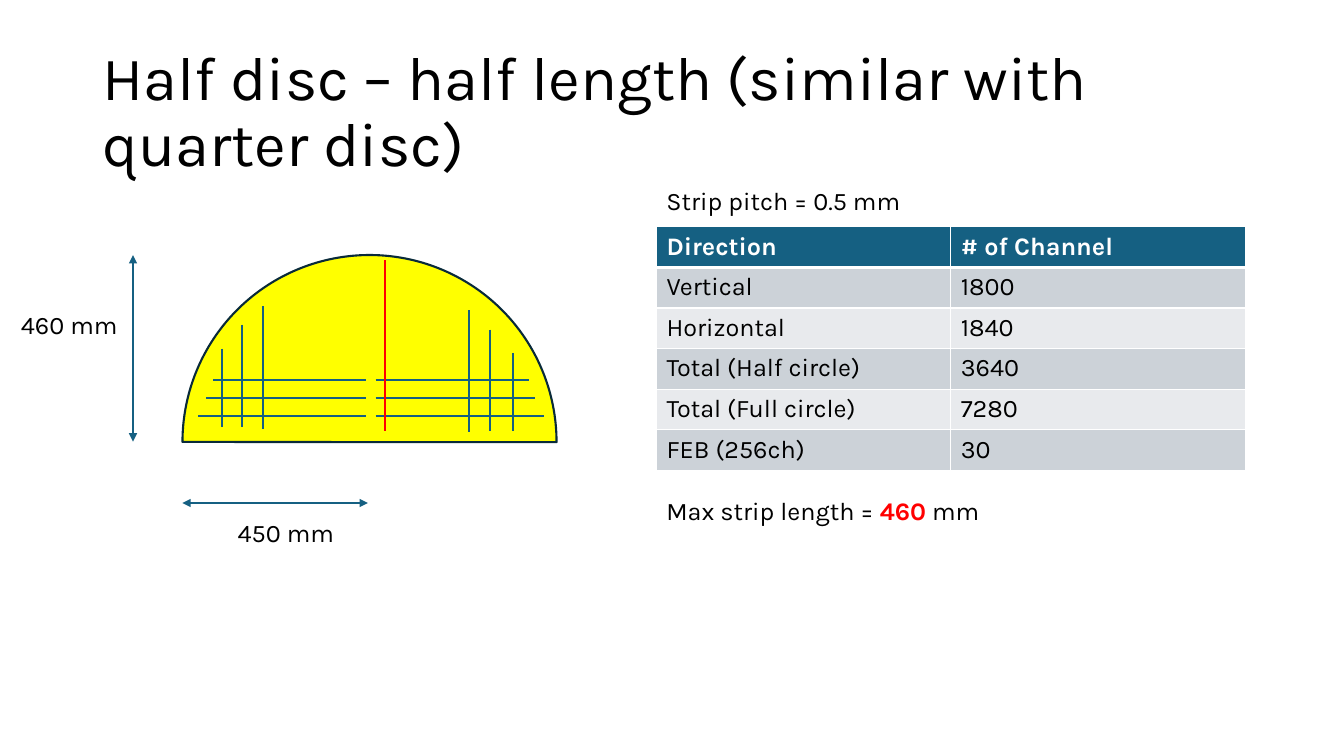
"""Build the half disc strip layout slide."""
from lxml.etree import SubElement
from pptx import Presentation
from pptx.dml.color import RGBColor
from pptx.enum.shapes import MSO_CONNECTOR, MSO_SHAPE
from pptx.enum.text import MSO_ANCHOR
from pptx.oxml.ns import qn
from pptx.util import Pt

BLACK, WHITE, RED = "000000", "FFFFFF", "FF0000"
TEAL, NAVY, YELLOW = "156082", "092A39", "FFFF00"
BANDS = "CCD2D8", "E8EAED"


def color(value):
    return RGBColor.from_string(value)


class StripSlide:
    def __init__(self, slide, font="Karla", size=18, stroke=1.5):
        self.shapes = slide.shapes
        self.font, self.size, self.stroke = font, size, stroke

    def style(self, font, ink=BLACK, size=None, bold=False):
        font.name, font.size, font.bold = self.font, Pt(size or self.size), bold
        font.color.rgb = color(ink)

    def text(self, left, top, width, height, content, size=None, spacing=None):
        box = self.shapes.add_textbox(Pt(left), Pt(top), Pt(width), Pt(height))
        frame = box.text_frame
        frame.word_wrap = True
        frame.vertical_anchor = MSO_ANCHOR.MIDDLE
        paragraph = frame.paragraphs[0]
        paragraph.line_spacing = spacing
        self.style(paragraph.font, size=size)
        paragraph.add_run().text = content
        return paragraph

    def half_disc(self, left, top, diameter):
        disc = self.shapes.add_shape(MSO_SHAPE.PIE, Pt(left), Pt(top), Pt(diameter), Pt(diameter))
        disc.adjustments[0], disc.adjustments[1] = 54.03, 162
        disc.rotation = 90
        disc.shadow.inherit = False
        disc.fill.solid()
        disc.fill.fore_color.rgb = color(YELLOW)
        disc.line.color.rgb = color(NAVY)
        disc.line.width = Pt(self.stroke)

    def line(self, x1, y1, x2, y2, ink=TEAL, arrows=False):
        strip = self.shapes.add_connector(MSO_CONNECTOR.STRAIGHT, Pt(x1), Pt(y1), Pt(x2), Pt(y2))
        strip.line.color.rgb = color(ink)
        strip.line.width = Pt(self.stroke)
        properties = strip.line._get_or_add_ln()
        if arrows:
            for end in ("a:headEnd", "a:tailEnd"):
                SubElement(properties, qn(end), type="triangle")
        SubElement(properties.getparent(), qn("a:effectLst"))

    def border(self, cell, side, width):
        edge = SubElement(cell._tc.get_or_add_tcPr(), qn(f"a:ln{side}"), w=str(Pt(width)))
        SubElement(SubElement(edge, qn("a:solidFill")), qn("a:srgbClr"), val=WHITE)

    def table(self, left, top, width, row_height, rows):
        grid = self.shapes.add_table(len(rows), len(rows[0]), Pt(left), Pt(top),
                                     Pt(width), Pt(row_height * len(rows))).table
        for r, values in enumerate(rows):
            header = r == 0
            grid.rows[r].height = Pt(row_height)
            for c, value in enumerate(values):
                cell = grid.cell(r, c)
                cell.text = value
                self.style(cell.text_frame.paragraphs[0].font, WHITE if header else BLACK, bold=header)
                for side in "LRTB":
                    under_header = (r, side) in ((0, "B"), (1, "T"))
                    self.border(cell, side, 3 if under_header else 1)
                cell.fill.solid()
                cell.fill.fore_color.rgb = color(TEAL if header else BANDS[(r - 1) % 2])


def main():
    deck = Presentation()
    deck.slide_width, deck.slide_height = Pt(960), Pt(540)
    page = StripSlide(deck.slides.add_slide(deck.slide_layouts[6]))

    page.text(66, 28.8, 860.5, 104.4, "Half disc – half length (similar with quarter disc)",
              size=44, spacing=0.9)

    page.half_disc(130.3, 182.2, 267.2)
    page.line(130.3, 359.3, 262.8, 359.3, arrows=True)
    page.text(162.7, 366, 100.8, 29, "450 mm")
    page.line(95, 315.4, 95, 182.2, arrows=True)
    page.text(7.9, 217.2, 100.8, 29, "460 mm")

    vertical_strips = [(158.4, 249, 305.3), (172.8, 231.8, 305.3), (187.9, 218.9, 306.7),
                       (334.8, 221.8, 308.9), (349.9, 235.4, 308.2), (366.5, 252, 308.2)]
    for x, top, bottom in vertical_strips:
        page.line(x, top, x, bottom)

    horizontal_ends = [(141.1, 388.8), (146.9, 382.3), (151.9, 378)]
    for level, (left, right) in enumerate(horizontal_ends):
        y = 297.4 - 13 * level
        page.line(261.4, y, left, y)
        page.line(268.4, y, right, y)

    page.line(275, 185.8, 275, 308.2, ink=RED)

    page.table(468.9, 162, 420.5, 29, [
        ("Direction", "# of Channel"),
        ("Vertical", "1800"),
        ("Horizontal", "1840"),
        ("Total (Half circle)", "3640"),
        ("Total (Full circle)", "7280"),
        ("FEB (256ch)", "30"),
    ])

    page.text(468.9, 128.9, 241.2, 29, "Strip pitch = 0.5 mm")
    max_length = page.text(468.9, 349.9, 241.2, 29, "Max strip length = ")
    longest = max_length.add_run()
    longest.text = "460"
    page.style(longest.font, RED, bold=True)
    max_length.add_run().text = " mm"
    for run in max_length.runs[::2]:
        page.style(run.font)

    deck.save("out.pptx")


if __name__ == "__main__":
    main()
